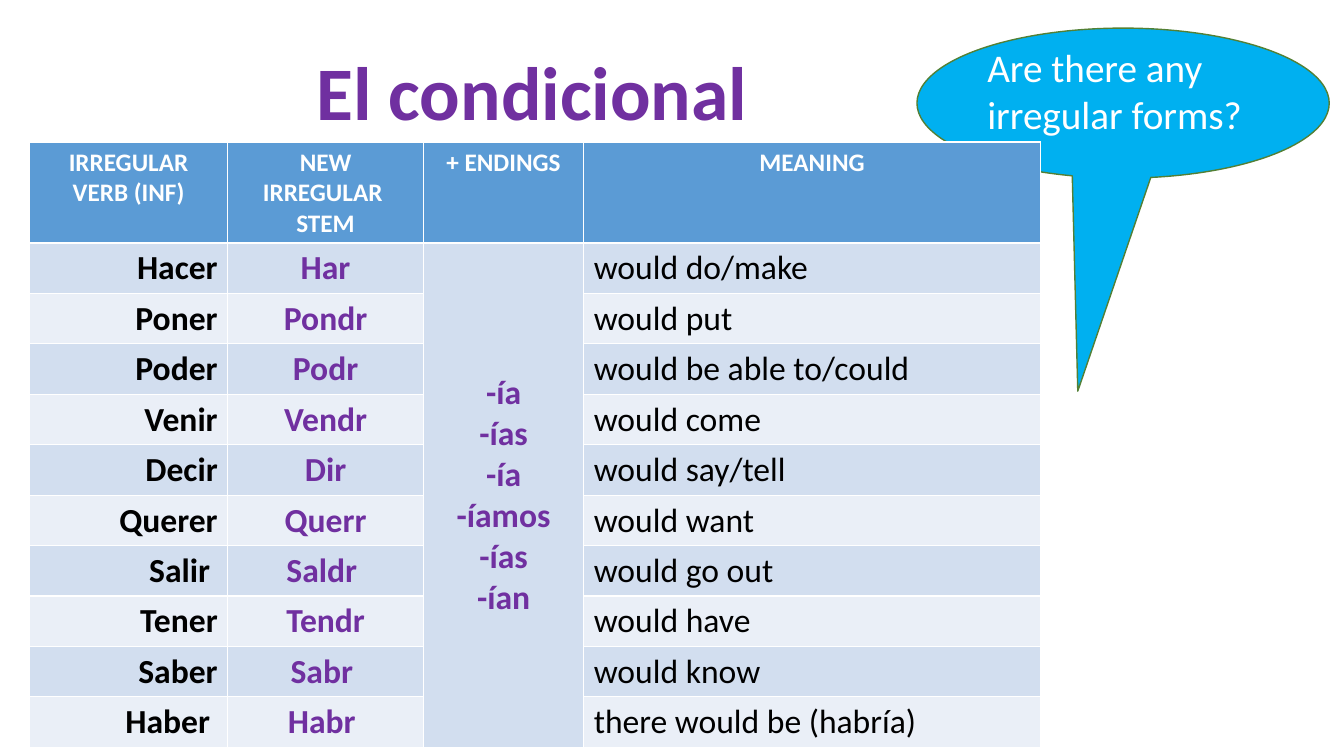
"""Builds a slide on the irregular forms of the Spanish conditional."""
from pptx import Presentation
from pptx.dml.color import RGBColor
from pptx.enum.shapes import MSO_SHAPE
from pptx.enum.text import MSO_ANCHOR, MSO_AUTO_SIZE, PP_ALIGN
from pptx.util import Cm, Pt

LEFT, CENTER, RIGHT = PP_ALIGN.LEFT, PP_ALIGN.CENTER, PP_ALIGN.RIGHT
TOP, MIDDLE = MSO_ANCHOR.TOP, MSO_ANCHOR.MIDDLE
CALLOUT = MSO_SHAPE.OVAL_CALLOUT
GROW = MSO_AUTO_SIZE.SHAPE_TO_FIT_TEXT

PURPLE, BLACK, WHITE = "7030A0", "000000", "FFFFFF"
HEADER_BLUE, BANDS = "5B9BD5", ("D2DEEF", "EAEFF7")
SKY_BLUE, OLIVE = "00B0F0", "538035"

COLUMN_WIDTHS = (5, 4.93, 4.04, 11.51)
HEADER_HEIGHT, ROW_HEIGHT = 2.54, 1.27
HEADINGS = (
    ["IRREGULAR VERB (INF)"],
    ["NEW IRREGULAR ", "STEM"],
    ["+ ENDINGS"],
    ["MEANING"],
)
ENDINGS = ["-ía", "-ías", "-ía", "-íamos", "-ías", "-ían"]
VERBS = (
    ("Hacer", "Har", "would do/make"),
    ("Poner", "Pondr", "would put"),
    ("Poder", "Podr", "would be able to/could"),
    ("Venir", "Vendr", "would come"),
    ("Decir", "Dir", "would say/tell"),
    ("Querer", "Querr", "would want"),
    ("Salir ", "Saldr ", "would go out"),
    ("Tener", "Tendr", "would have"),
    ("Saber", "Sabr ", "would know"),
    ("Haber ", "Habr ", "there would be (habría)"),
)


def color(value):
    return RGBColor.from_string(value)


class SlideBuilder:
    def __init__(self, slide, font="Calibri"):
        self.slide = slide
        self.font = font

    def add_lines(self, frame, lines, size, text_color, bold=True, align=LEFT):
        for index, line in enumerate(lines):
            paragraph = frame.add_paragraph() if index else frame.paragraphs[0]
            paragraph.alignment = align
            run = paragraph.add_run()
            run.text = line
            run.font.name = self.font
            run.font.size = Pt(size)
            run.font.bold = bold
            run.font.color.rgb = color(text_color)

    def title(self, text, left, top, width, height):
        box = self.slide.shapes.add_textbox(Cm(left), Cm(top), Cm(width), Cm(height))
        frame = box.text_frame
        frame.word_wrap = False
        frame.auto_size = GROW
        self.add_lines(frame, [text], 54, PURPLE)

    def callout(self, text, left, top, width, height, tip):
        shape = self.slide.shapes.add_shape(
            CALLOUT, Cm(left), Cm(top), Cm(width), Cm(height))
        shape.adjustments[0], shape.adjustments[1] = tip
        shape.shadow.inherit = False
        shape.fill.solid()
        shape.fill.fore_color.rgb = color(SKY_BLUE)
        shape.line.color.rgb = color(OLIVE)
        shape.line.width = Pt(1)
        frame = shape.text_frame
        frame.word_wrap = True
        frame.vertical_anchor = MIDDLE
        frame.margin_top, frame.margin_bottom = Cm(0), Cm(0.65)
        self.add_lines(frame, [text], 28, WHITE, bold=False)

    def cell(self, cell, lines, fill, size=24, text_color=BLACK,
             bold=True, align=CENTER, anchor=TOP):
        cell.fill.solid()
        cell.fill.fore_color.rgb = color(fill)
        cell.vertical_anchor = anchor
        self.add_lines(cell.text_frame, lines, size, text_color, bold, align)

    def verb_table(self, left, top):
        height = HEADER_HEIGHT + ROW_HEIGHT * len(VERBS)
        table = self.slide.shapes.add_table(
            len(VERBS) + 1, len(COLUMN_WIDTHS),
            Cm(left), Cm(top), Cm(sum(COLUMN_WIDTHS)), Cm(height)).table
        for column, width in zip(table.columns, COLUMN_WIDTHS):
            column.width = Cm(width)
        for index, row in enumerate(table.rows):
            row.height = Cm(ROW_HEIGHT if index else HEADER_HEIGHT)
        for index, heading in enumerate(HEADINGS):
            self.cell(table.cell(0, index), heading, HEADER_BLUE, 18, WHITE)
        for row, (verb, stem, meaning) in enumerate(VERBS, 1):
            band = BANDS[(row - 1) % 2]
            self.cell(table.cell(row, 0), [verb], band, align=RIGHT)
            self.cell(table.cell(row, 1), [stem], band, text_color=PURPLE)
            self.cell(table.cell(row, 3), [meaning], band, bold=False, align=LEFT)
        table.cell(1, 2).merge(table.cell(len(VERBS), 2))
        self.cell(table.cell(1, 2), ENDINGS, BANDS[0],
                  text_color=PURPLE, anchor=MIDDLE)


def main():
    presentation = Presentation()
    presentation.slide_width, presentation.slide_height = Cm(33.87), Cm(19.05)
    slide = presentation.slides.add_slide(presentation.slide_layouts[6])
    builder = SlideBuilder(slide)
    builder.title("El condicional", 7.72, 1.02, 11.48, 2.57)
    builder.callout("Are there any irregular forms?",
                    23.11, 0.71, 10.39, 3.78, (-0.11, 1.92))
    builder.verb_table(0.74, 3.58)
    presentation.save("out.pptx")


if __name__ == "__main__":
    main()
